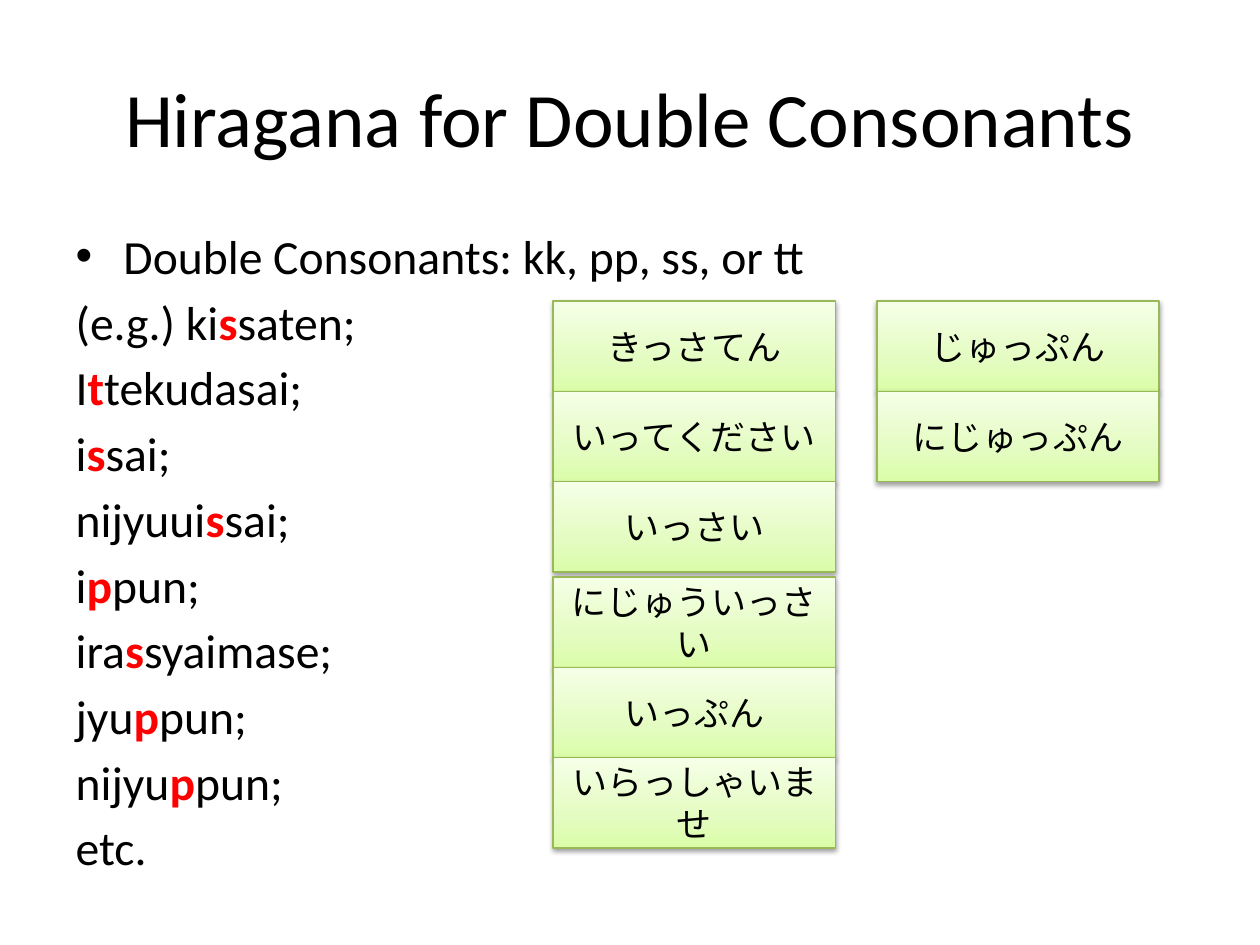
from copy import deepcopy
from dataclasses import dataclass

from lxml.etree import SubElement
from pptx import Presentation
from pptx.dml.color import RGBColor
from pptx.enum.shapes import MSO_SHAPE as Shape
from pptx.enum.text import MSO_ANCHOR as Anchor, MSO_AUTO_SIZE as AutoSize, PP_ALIGN as Align
from pptx.oxml.ns import qn
from pptx.util import Inches, Pt


@dataclass(frozen=True)
class Theme:
    """Colours, font and type sizes of the slide."""
    font: str = "Calibri"
    text: str = "000000"
    accent: str = "FF0000"
    outline: str = "98B955"
    gradient: tuple = ((0, "DAFDA7"), (0.35, "E4FCC2"), (1, "F5FFE7"))
    title_size: float = 44
    body_size: float = 27.2
    card_size: float = 20
    body_gap: float = 4.9


@dataclass(frozen=True)
class Box:
    """A region of the slide, in inches."""
    left: float
    top: float
    width: float
    height: float

    def rows(self, count):
        """Split the box into equal rows."""
        height = self.height / count
        return [Box(self.left, self.top + i * height, self.width, height) for i in range(count)]

    def lengths(self):
        """Return left, top, width and height as lengths."""
        return [Inches(n) for n in (self.left, self.top, self.width, self.height)]


THEME = Theme()
HEADING = "Double Consonants: kk, pp, ss, or tt"
EXAMPLES = [
    "(e.g.) ki*s*saten;", "I*t*tekudasai;", "i*s*sai;", "nijyuui*s*sai;", "i*p*pun;",
    "ira*s*syaimase;", "jyu*p*pun;", "nijyu*p*pun;", "etc.",
]
CARD_STACKS = [
    (Box(4.39, 2.39, 2.24, 2.15), ["きっさてん", "いってください", "いっさい"]),
    (Box(4.39, 4.58, 2.24, 2.15), ["にじゅういっさい", "いっぷん", "いらっしゃいませ"]),
    (Box(6.96, 2.39, 2.24, 1.43), ["じゅっぷん", "にじゅっぷん"]),
]


def style(font, size):
    """Apply the theme font, text colour and a size."""
    font.name, font.size = THEME.font, Pt(size)
    font.color.rgb = RGBColor.from_string(THEME.text)


def place(shape, box):
    """Move a shape to a box."""
    shape.left, shape.top, shape.width, shape.height = box.lengths()


def add_title(slide, box, text):
    """Fill the title placeholder."""
    title = slide.shapes.title
    place(title, box)
    frame = title.text_frame
    frame.text = text
    frame.vertical_anchor = Anchor.MIDDLE
    paragraph = frame.paragraphs[0]
    paragraph.alignment = Align.CENTER
    style(paragraph.font, THEME.title_size)


def set_bullet(paragraph, bullet, indent):
    """Give a paragraph a hanging bullet, or none."""
    properties = paragraph._p.get_or_add_pPr()
    properties.set("marL", str(Inches(indent)))
    properties.set("indent", str(-Inches(indent)))
    if bullet:
        SubElement(properties, qn("a:buChar"), char=bullet)
    else:
        SubElement(properties, qn("a:buNone"))


def add_examples(slide, box, heading, examples):
    """Fill the body with a bulleted heading and examples with marked letters."""
    body = slide.placeholders[1]
    place(body, box)
    frame = body.text_frame
    frame.auto_size = AutoSize.NONE
    for index, line in enumerate([heading, *examples]):
        paragraph = frame.paragraphs[0] if index == 0 else frame.add_paragraph()
        paragraph.space_before = Pt(THEME.body_gap)
        set_bullet(paragraph, *(("•", 0.38) if index == 0 else (None, 0)))
        style(paragraph.font, THEME.body_size)
        for position, part in enumerate(line.split("*")):
            run = paragraph.add_run()
            run.text = part
            if position % 2:
                run.font.bold = True
                run.font.color.rgb = RGBColor.from_string(THEME.accent)


def fill_gradient(shape):
    """Fill a shape with the theme gradient, rising from its bottom edge."""
    shape.fill.gradient()
    shape.fill.gradient_angle = 90
    stop_list = shape._element.spPr.find(".//" + qn("a:gsLst"))
    stop_list.append(deepcopy(stop_list[-1]))
    for stop, (position, color) in zip(shape.fill.gradient_stops, THEME.gradient):
        stop.position = position
        stop.color.rgb = RGBColor.from_string(color)


def add_shadow(shape):
    """Cast a soft shadow below a shape."""
    shape.shadow.inherit = False
    effects = shape._element.spPr.find(qn("a:effectLst"))
    shadow = SubElement(effects, qn("a:outerShdw"), blurRad=str(Pt(3.1)), dist=str(Pt(1.6)),
                        dir="5400000", rotWithShape="0")
    color = SubElement(shadow, qn("a:srgbClr"), val="000000")
    SubElement(color, qn("a:alpha"), val="38000")


def add_card_stack(slide, box, words):
    """Stack one card for each word in a box."""
    for row, word in zip(box.rows(len(words)), words):
        card = slide.shapes.add_shape(Shape.RECTANGLE, *row.lengths())
        fill_gradient(card)
        card.line.color.rgb = RGBColor.from_string(THEME.outline)
        card.line.width = Pt(0.75)
        add_shadow(card)
        frame = card.text_frame
        frame.text = word
        frame.word_wrap = True
        frame.vertical_anchor = Anchor.MIDDLE
        paragraph = frame.paragraphs[0]
        paragraph.alignment = Align.CENTER
        style(paragraph.font, THEME.card_size)


def main():
    """Build and save the presentation."""
    presentation = Presentation()
    presentation.slide_width, presentation.slide_height = Inches(10), Inches(7.5)
    slide = presentation.slides.add_slide(presentation.slide_layouts[1])
    add_title(slide, Box(0.5, 0.3, 9, 1.25), "Hiragana for Double Consonants")
    add_examples(slide, Box(0.5, 1.75, 9, 4.95), HEADING, EXAMPLES)
    for box, words in CARD_STACKS:
        add_card_stack(slide, box, words)
    presentation.save("out.pptx")


if __name__ == "__main__":
    main()
